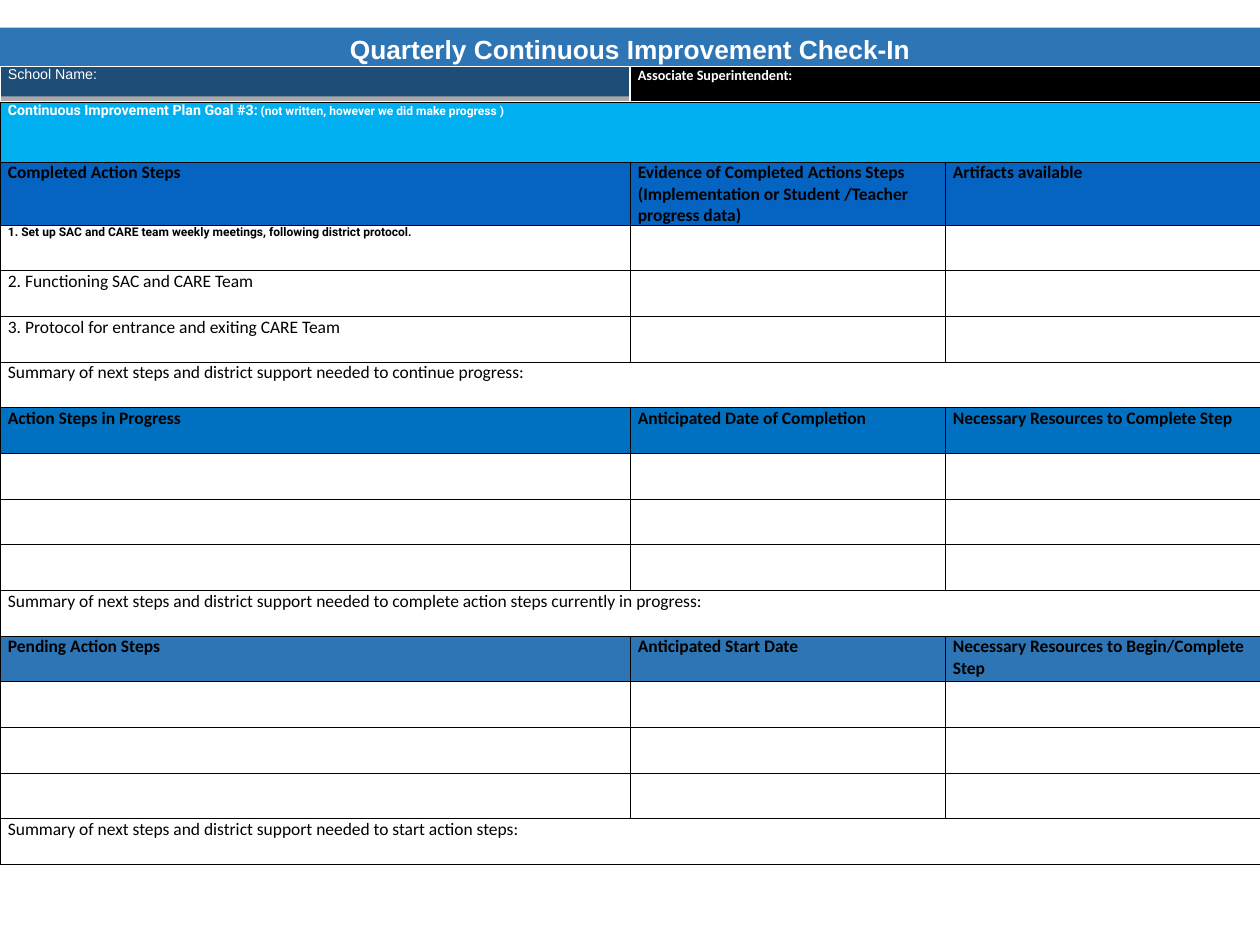
from pptx import Presentation, util as u
from pptx.dml.color import RGBColor
from pptx.enum import text
from pptx.oxml import parse_xml
from pptx.oxml.ns import nsdecls, qn

WIDTH, HEIGHT = 16, 12
WHITE, BLACK = "FFFFFF", "000000"
COLUMNS = [8, 4, 4]
GOAL_HEIGHT, HEADER_HEIGHT, ROW_HEIGHT = 0.76, 0.8, 0.58

# Each section: fill, headers, action steps, closing summary
SECTIONS = [
    ("0563C1",
     ["Completed Action Steps",
      "Evidence of Completed Actions Steps (Implementation or Student /Teacher progress data)",
      "Artifacts available"],
     ["1. Set up SAC and CARE team weekly meetings, following district protocol.",
      "2. Functioning SAC and CARE Team",
      "3. Protocol for entrance and exiting CARE Team"],
     "Summary of next steps and district support needed to continue progress:"),
    ("0070C0",
     ["Action Steps in Progress", "Anticipated Date of Completion",
      "Necessary Resources to Complete Step"],
     ["", "", ""],
     "Summary of next steps and district support needed to complete action steps currently in progress:"),
    ("2E75B6",
     ["Pending Action Steps", "Anticipated Start Date",
      "Necessary Resources to Begin/Complete Step"],
     ["", "", ""],
     "Summary of next steps and district support needed to start action steps:"),
]


def rgb(color):
    return RGBColor.from_string(color)


def format_run(run, size, name, color, bold=False):
    run.font.size, run.font.name, run.font.bold = u.Pt(size), name, bold
    run.font.color.rgb = rgb(color)


def set_cell(cell, words="", fill=None, size=16, name="Calibri", color=BLACK, bold=False):
    cell.margin_left = cell.margin_right = u.Inches(0.1)
    cell.margin_top = cell.margin_bottom = 0
    if fill:
        cell.fill.solid()
        cell.fill.fore_color.rgb = rgb(fill)
    else:
        cell.fill.background()
    if words:
        paragraph = cell.text_frame.paragraphs[0]
        paragraph.text = words
        format_run(paragraph.runs[0], size, name, color, bold)


def set_borders(cell, sides, color, points):
    properties = cell._tc.get_or_add_tcPr()
    for side in sides:
        properties.append(parse_xml(
            f'<a:ln{side} {nsdecls("a")} w="{u.Pt(points)}"><a:solidFill>'
            f'<a:srgbClr val="{color}"/></a:solidFill></a:ln{side}>'))


def add_plain_table(slide, box, columns, rows):
    frame = slide.shapes.add_table(len(rows), len(columns), *map(u.Inches, box))
    table = frame.table
    table.first_row = table.horz_banding = False
    for column, width in zip(table.columns, columns):
        column.width = u.Inches(width)
    for row, height in zip(table.rows, rows):
        row.height = u.Inches(height)
    return table


def add_title(slide, box):
    title = slide.shapes.title
    title.left, title.top, title.width, title.height = map(u.Inches, box)
    title.fill.solid()
    title.fill.fore_color.rgb = rgb("2E75B6")
    frame = title.text_frame
    frame.text = "Quarterly Continuous Improvement Check-In"
    frame.margin_left = frame.margin_right = u.Inches(0.13)
    frame.margin_top = frame.margin_bottom = u.Inches(0.07)
    frame.word_wrap = True
    frame.auto_size = text.MSO_AUTO_SIZE.SHAPE_TO_FIT_TEXT
    frame.vertical_anchor = text.MSO_ANCHOR.TOP
    paragraph = frame.paragraphs[0]
    paragraph.alignment = text.PP_ALIGN.CENTER
    format_run(paragraph.runs[0], 24, "Arial", WHITE, True)


def add_school_band(slide, box):
    table = add_plain_table(slide, box, [box[2] / 2] * 2, [box[3]])
    school, superintendent = table.cell(0, 0), table.cell(0, 1)
    set_borders(school, "RB", WHITE, 2)
    set_borders(superintendent, "B", WHITE, 2)
    set_cell(school, "School Name:", BLACK, 13, "Arial", WHITE)
    set_cell(superintendent, "Associate Superintendent:", BLACK, 13, "Calibri", WHITE, True)
    # See-through black gives the grey half
    color = school._tc.tcPr.find(qn("a:solidFill"))[0]
    color.append(parse_xml(f'<a:alpha {nsdecls("a")} val="34000"/>'))


def add_plan_table(slide, box):
    row_count = 1 + sum(len(steps) + 2 for _, _, steps, _ in SECTIONS)
    heights = [GOAL_HEIGHT, HEADER_HEIGHT] + [ROW_HEIGHT] * (row_count - 2)
    table = add_plain_table(slide, box, COLUMNS, heights)
    for cell in table.iter_cells():
        set_borders(cell, "LRTB", BLACK, 1)
        set_cell(cell)

    def add_wide_row(row, words, **style):
        table.cell(row, 0).merge(table.cell(row, 2))
        set_cell(table.cell(row, 0), words, **style)

    # Goal
    add_wide_row(0, "Continuous Improvement Plan Goal #3:", fill="00B0F0",
                 size=13, name="Roboto", color=WHITE, bold=True)
    remark = table.cell(0, 0).text_frame.paragraphs[0].add_run()
    remark.text = " (not written, however we did make progress )"
    format_run(remark, 11, "Roboto", WHITE, True)

    # Sections
    row = 1
    for fill, headers, steps, summary in SECTIONS:
        for column, header in enumerate(headers):
            set_cell(table.cell(row, column), header, fill, bold=True)
        for offset, step in enumerate(steps, 1):
            set_cell(table.cell(row + offset, 0), step)
        row += len(steps) + 1
        add_wide_row(row, summary)
        row += 1

    # The first step is set smaller and bold
    first_step = table.cell(2, 0).text_frame.paragraphs[0].runs[0]
    format_run(first_step, 11, "Roboto", BLACK, True)


def main():
    presentation = Presentation()
    presentation.slide_width = u.Inches(WIDTH)
    presentation.slide_height = u.Inches(HEIGHT)
    slide = presentation.slides.add_slide(presentation.slide_layouts[5])
    add_title(slide, (0, 0.35, WIDTH, 0.54))
    add_school_band(slide, (0, 0.85, WIDTH, 0.45))
    add_plan_table(slide, (0, 1.3, WIDTH, 9.68))
    presentation.save("out.pptx")


if __name__ == "__main__":
    main()
